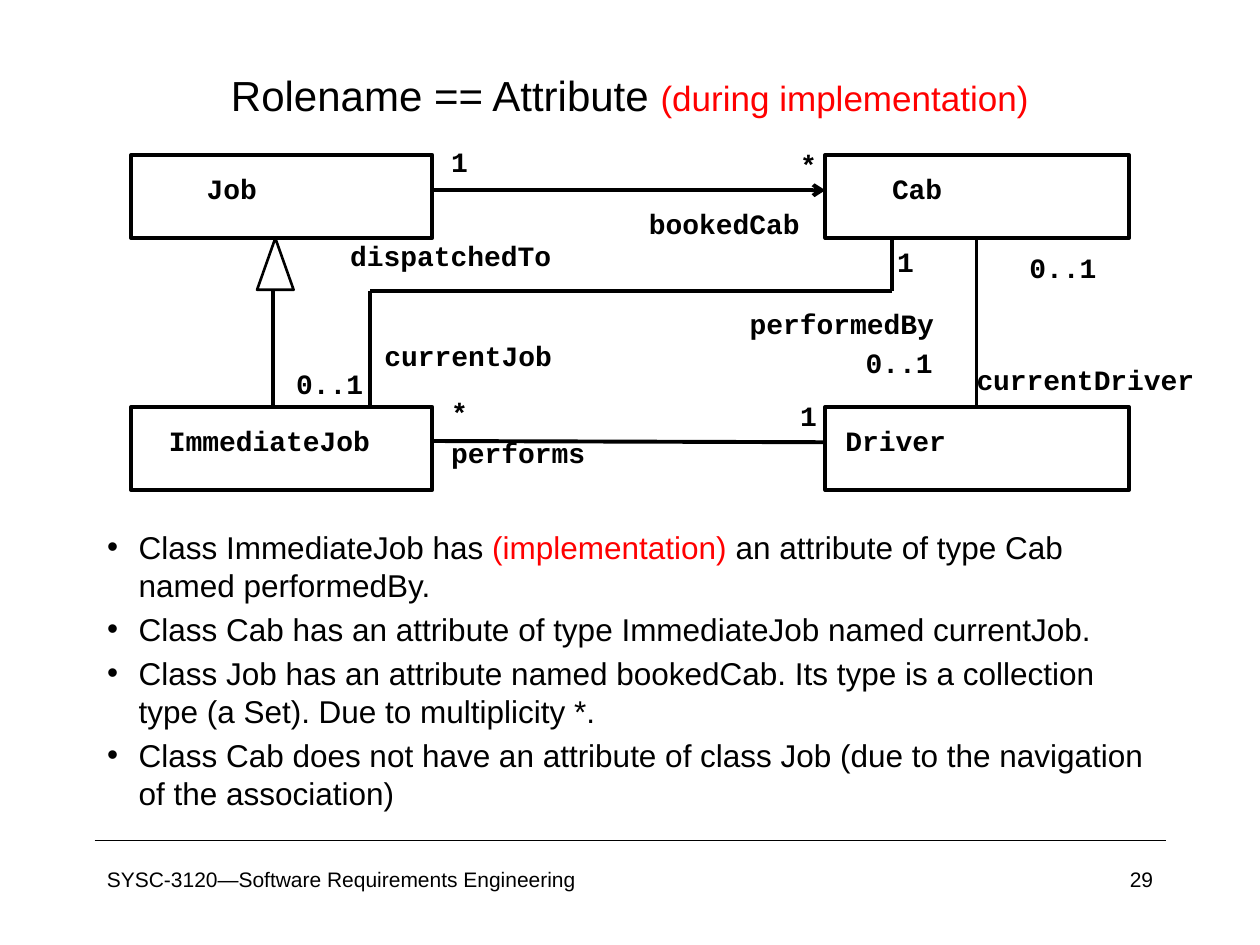
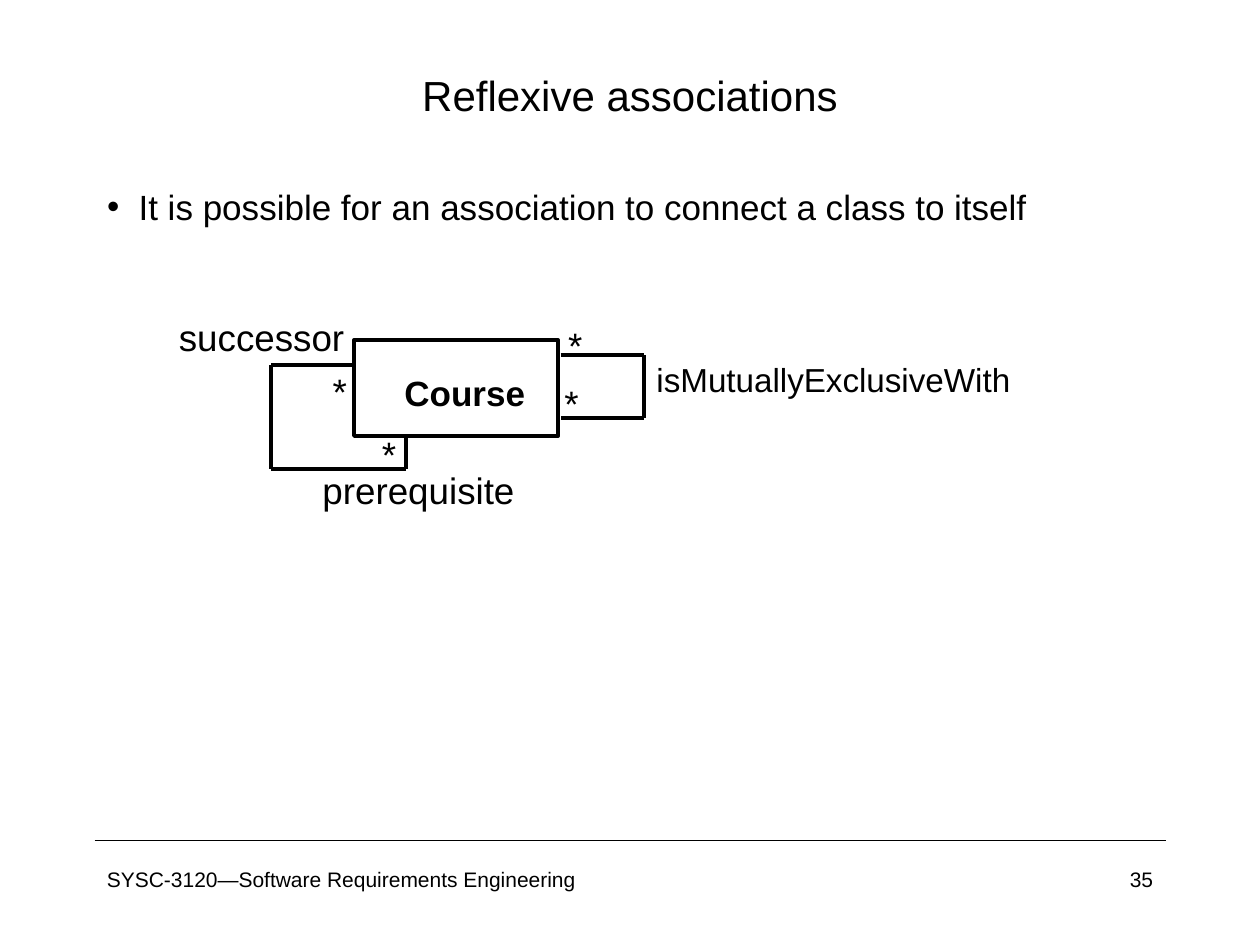
import itertools
from dataclasses import dataclass
from typing import NamedTuple

import pptx
import pptx.dml.color
import pptx.enum.shapes
import pptx.enum.text
import pptx.oxml.ns
import pptx.oxml.xmlchemy
import pptx.util
from lxml import etree
from pptx.util import Inches

Shape = pptx.enum.shapes.MSO_SHAPE
Align = pptx.enum.text.PP_ALIGN


@dataclass(frozen=True)
class Theme:
    ink: str = "000000"
    paper: str = "FFFFFF"
    red: str = "FF0000"
    sans: str = "Arial"
    mono: str = "Courier New"
    title: int = 24
    aside: int = 20
    small: int = 12
    code: int = 16
    rule: float = 1
    thin: float = 1.5
    line: float = 2.25


class Font(NamedTuple):
    name: str
    size: int
    bold: bool = False


class Part(NamedTuple):
    text: str
    red: bool = False
    size: int | None = None


class Box(NamedTuple):
    left: float
    top: float
    width: float
    height: float

    def lengths(self) -> list:
        return [Inches(v) for v in self]


class Label(NamedTuple):
    text: str
    left: float
    top: float
    width: float = 0.11
    font: Font | None = None


class Wire(NamedTuple):
    points: list
    arrow: bool = False


THEME = Theme()
CODE = Font(THEME.mono, THEME.code, True)
NOTE = Font(THEME.sans, 21)
FOOT = Font(THEME.sans, THEME.small)
COURSE = "SYSC-3120—Software Requirements Engineering"


def tint(code: str) -> pptx.dml.color.RGBColor:
    return pptx.dml.color.RGBColor.from_string(code)


def style(para, font: Font, align=Align.LEFT) -> None:
    para.alignment = align
    para.font.name = font.name
    para.font.size = pptx.util.Pt(font.size)
    para.font.bold = font.bold
    para.font.color.rgb = tint(THEME.ink)


def fill_in(para, parts: list[Part]) -> None:
    for part in parts:
        run = para.add_run()
        run.text = part.text
        if part.red:
            run.font.color.rgb = tint(THEME.red)
        if part.size:
            run.font.size = pptx.util.Pt(part.size)


# Shapes and lines
def draw_line(slide, start, end, width=THEME.line, arrow=False) -> None:
    ends = [Inches(v) for v in (*start, *end)]
    link = slide.shapes.add_connector(pptx.enum.shapes.MSO_CONNECTOR.STRAIGHT, *ends)
    link.line.color.rgb = tint(THEME.ink)
    link.line.width = pptx.util.Pt(width)
    if arrow:
        head = etree.SubElement(link.line._get_or_add_ln(), pptx.oxml.ns.qn("a:tailEnd"))
        head.set("type", "arrow")
    etree.SubElement(link._element.spPr, pptx.oxml.ns.qn("a:effectLst"))


def draw_wire(slide, wire: Wire) -> None:
    for start, end in itertools.pairwise(wire.points):
        draw_line(slide, start, end, arrow=wire.arrow)


def draw_shape(slide, kind, box: Box, width=THEME.line) -> None:
    shape = slide.shapes.add_shape(kind, *box.lengths())
    shape.shadow.inherit = False
    shape.fill.solid()
    shape.fill.fore_color.rgb = tint(THEME.paper)
    shape.line.color.rgb = tint(THEME.ink)
    shape.line.width = pptx.util.Pt(width)


# Text
def draw_label(slide, label: Label) -> None:
    area = Box(label.left, label.top, label.width, 0.3)
    frame = slide.shapes.add_textbox(*area.lengths()).text_frame
    frame.margin_left = frame.margin_right = 0
    frame.margin_top = frame.margin_bottom = 0
    frame.word_wrap = False
    para = frame.paragraphs[0]
    para.text = label.text
    style(para, label.font or NOTE)


def draw_code(slide, text: str, left: float, top: float) -> None:
    """Monospaced label: every letter is 0.6 em wide."""
    width = len(text) * 0.6 * THEME.code / 72
    draw_label(slide, Label(text, left, top, width, CODE))


def draw_foot(slide, text: str, box: Box, align) -> None:
    frame = slide.shapes.add_textbox(*box.lengths()).text_frame
    frame.word_wrap = True
    frame.paragraphs[0].text = text
    style(frame.paragraphs[0], FOOT, align)


def place(holder, box: Box):
    holder.left, holder.top, holder.width, holder.height = box.lengths()
    frame = holder.text_frame
    frame.auto_size = pptx.enum.text.MSO_AUTO_SIZE.NONE
    return frame


# Frame that both slides share
def add_page(deck, title: list[Part], items: list[list[Part]],
             body: Box, size: int, number: int):
    slide = deck.slides.add_slide(deck.slide_layouts[1])
    draw_line(slide, (0.75, 6.67), (9.25, 6.67), THEME.rule)

    head = place(slide.shapes.title, Box(0.75, 0.46, 8.5, 0.58))
    head.vertical_anchor = pptx.enum.text.MSO_ANCHOR.MIDDLE
    style(head.paragraphs[0], Font(THEME.sans, THEME.title), Align.CENTER)
    fill_in(head.paragraphs[0], title)

    frame = place(slide.placeholders[1], body)
    for spot, parts in enumerate(items):
        para = frame.add_paragraph() if spot else frame.paragraphs[0]
        style(para, Font(THEME.sans, size))
        fill_in(para, parts)
        props = para._p.get_or_add_pPr()
        props.set("marL", str(Inches(0.25)))
        props.set("indent", str(-Inches(0.25)))

    draw_foot(slide, COURSE, Box(0.75, 6.83, 4.25, 0.5), Align.LEFT)
    draw_foot(slide, str(number), Box(7.17, 6.83, 2.08, 0.5), Align.RIGHT)
    return slide


def add_roles(deck) -> None:
    slide = add_page(
        deck,
        [Part("Rolename == Attribute "),
         Part("(during implementation)", True, THEME.aside)],
        [[Part("Class ImmediateJob has "), Part("(implementation)", True),
          Part(" an attribute of type Cab named performedBy.")],
         [Part("Class Cab has an attribute of type ImmediateJob named currentJob.")],
         [Part("Class Job has an attribute named bookedCab. Its type is a "
               "collection type (a Set). Due to multiplicity *.")],
         [Part("Class Cab does not have an attribute of class Job "
               "(due to the navigation of the association)")]],
        Box(0.75, 4.14, 8.5, 2.52), 18, 29)

    # Class boxes on a two by two grid
    left, right, upper, lower, tall = 1.04, 6.55, 1.23, 3.23, 0.66
    edge, base, bend = 3.43, upper + tall, 2.31
    names = [("Job", left, upper, 0.6), ("Cab", right, upper, 0.53),
             ("ImmediateJob", left, lower, 0.3), ("Driver", right, lower, 0.16)]
    for name, x, y, inset in names:
        wide = edge - left if x == left else 2.41
        draw_shape(slide, Shape.RECTANGLE, Box(x, y, wide, tall))
        draw_code(slide, name, x + inset, y + 0.13)

    # Associations and inheritance
    wires = [
        Wire([(edge, 1.51), (right, 1.51)], True),
        Wire([(edge, 3.5), (right, 3.51)]),
        Wire([(7.75, base), (7.75, lower)]),
        Wire([(7.08, base), (7.08, bend), (2.94, bend), (2.94, lower)]),
        Wire([(2.17, bend), (2.17, lower)]),
    ]
    for wire in wires:
        draw_wire(slide, wire)
    draw_shape(slide, Shape.ISOSCELES_TRIANGLE, Box(2.04, base, 0.29, 0.41), THEME.thin)

    # Role names and multiplicities
    roles = [
        ("1", 3.58, 1.15), ("*", 6.35, 1.17), ("bookedCab", 5.15, 1.64),
        ("dispatchedTo", 2.78, 1.89), ("1", 7.12, 1.94), ("0..1", 8.17, 1.99),
        ("performedBy", 5.95, 2.43), ("currentJob", 3.05, 2.69),
        ("0..1", 6.87, 2.74), ("currentDriver", 7.75, 2.88),
        ("0..1", 2.35, 2.91), ("*", 3.58, 3.14), ("1", 6.35, 3.16),
        ("performs", 3.58, 3.46),
    ]
    for role in roles:
        draw_code(slide, *role)


def add_loops(deck) -> None:
    slide = add_page(
        deck, [Part("Reflexive associations")],
        [[Part("It is possible for an association to connect a class to itself")]],
        Box(0.75, 1.42, 8.5, 0.99), 20, 35)

    # Class and its two loops
    draw_shape(slide, Shape.RECTANGLE, Box(2.81, 2.7, 1.62, 0.76))
    draw_wire(slide, Wire([(2.8, 2.9), (2.15, 2.9), (2.15, 3.72),
                           (3.22, 3.72), (3.22, 3.46)]))
    draw_wire(slide, Wire([(4.45, 2.82), (5.11, 2.82), (5.11, 3.32), (4.45, 3.32)]))

    # Class name, roles and multiplicities
    labels = [
        Label("Course", 3.21, 2.95, 0.97, Font(THEME.sans, 20, True)),
        Label("isMutuallyExclusiveWith", 5.21, 2.85, 2.85, Font(THEME.sans, 19)),
        Label("successor", 1.42, 2.5, 1.33),
        Label("prerequisite", 2.56, 3.71, 1.54),
        Label("*", 4.51, 2.56), Label("*", 4.48, 3.02),
        Label("*", 2.64, 2.93), Label("*", 3.03, 3.43),
    ]
    for label in labels:
        draw_label(slide, label)


def main() -> None:
    deck = pptx.Presentation()
    deck.slide_width, deck.slide_height = Inches(10), Inches(7.5)
    add_roles(deck)
    add_loops(deck)
    deck.save("out.pptx")


if __name__ == "__main__":
    main()
